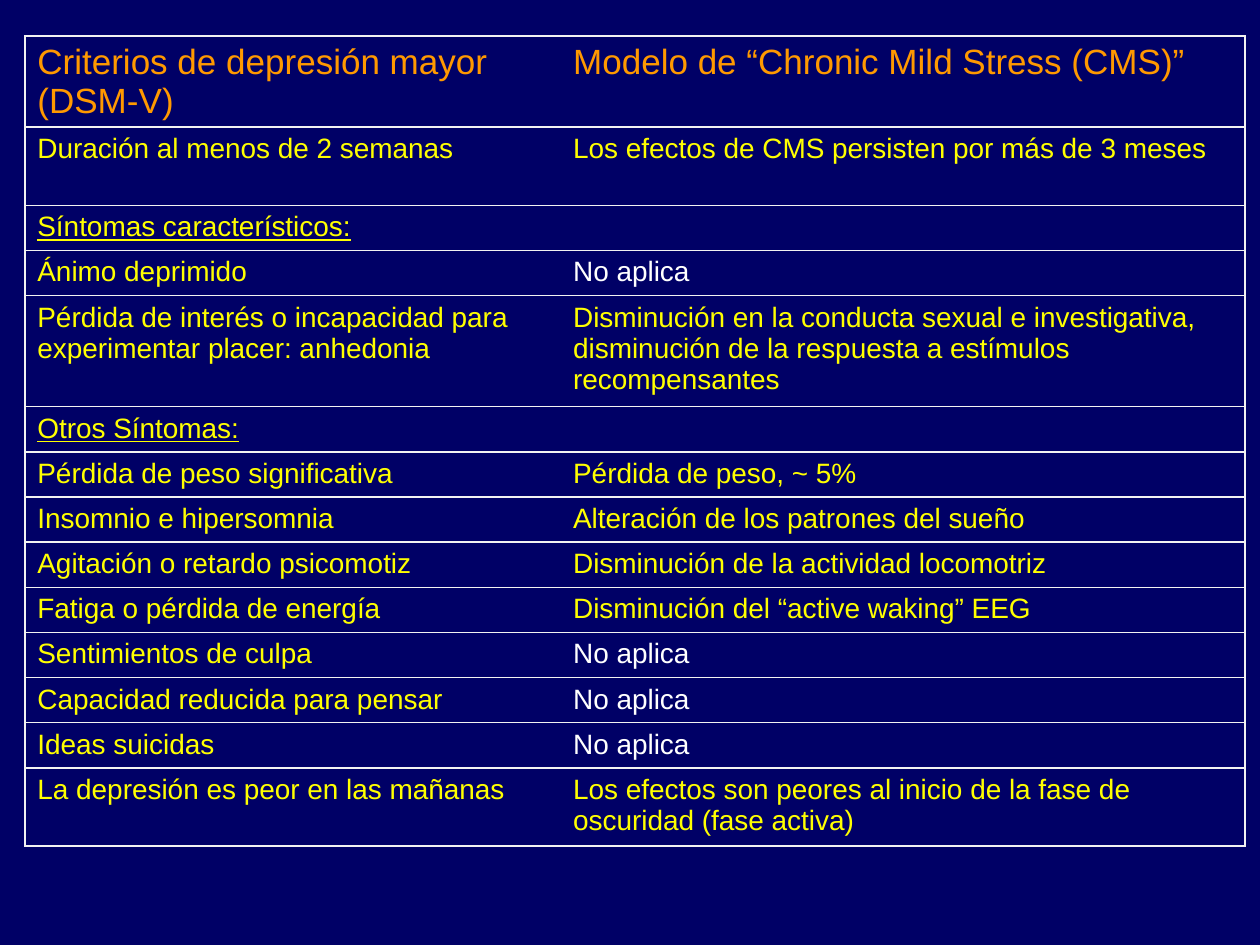
from pptx import Presentation
from pptx.dml.color import RGBColor as RGB
from pptx.oxml import parse_xml
from pptx.oxml.ns import nsdecls
from pptx.util import Cm, Pt

# Content: (criterion, equivalent in the model, row height in cm)
# A row without an equivalent is a section heading across both columns.
SINGLE, DOUBLE, TRIPLE = 0.91, 1.58, 2.24
NOT_APPLICABLE = "No aplica"
HEADER = ("Criterios de depresión mayor (DSM-V)",
          "Modelo de “Chronic Mild Stress (CMS)”", 1.81)
CRITERIA = [
    ("Duración al menos de 2 semanas",
     "Los efectos de CMS persisten por más de 3 meses", DOUBLE),
    ("Síntomas característicos:", None, SINGLE),
    ("Ánimo deprimido", NOT_APPLICABLE, SINGLE),
    ("Pérdida de interés o incapacidad para experimentar placer: anhedonia",
     "Disminución en la conducta sexual e investigativa, "
     "disminución de la respuesta a estímulos recompensantes", TRIPLE),
    ("Otros Síntomas:", None, SINGLE),
    ("Pérdida de peso significativa", "Pérdida de peso, ~ 5%", SINGLE),
    ("Insomnio e hipersomnia", "Alteración de los patrones del sueño", SINGLE),
    ("Agitación o retardo psicomotiz",
     "Disminución de la actividad locomotriz", SINGLE),
    ("Fatiga o pérdida de energía", "Disminución del “active waking” EEG", SINGLE),
    ("Sentimientos de culpa", NOT_APPLICABLE, SINGLE),
    ("Capacidad reducida para pensar", NOT_APPLICABLE, SINGLE),
    ("Ideas suicidas", NOT_APPLICABLE, SINGLE),
    ("La depresión es peor en las mañanas",
     "Los efectos son peores al inicio de la fase de oscuridad (fase activa)",
     DOUBLE),
]
THEME = {
    "font": "Arial", "header_size": 20, "body_size": 16,
    "background": "000066", "header": "FF9900", "body": "FFFF00",
    "not_applicable": "FFFFFF", "border": "F2F2F2", "border_width": 1,
}
LEFT, TOP = 0.5, 0.73
COLUMN_WIDTHS = (10.8, 13.8)


def set_borders(cell, sides):
    """Draw the given sides (L, R, T, B) and hide the others."""
    props = cell._tc.get_or_add_tcPr()
    for position, side in enumerate("LRTB"):
        paint = (f'<a:solidFill><a:srgbClr val="{THEME["border"]}"/></a:solidFill>'
                 if side in sides else "<a:noFill/>")
        props.insert(position, parse_xml(
            f'<a:ln{side} {nsdecls("a")} w="{Pt(THEME["border_width"])}">'
            f"{paint}</a:ln{side}>"))


def write(cell, text, color, size, underline):
    cell.text_frame.text = text
    font = cell.text_frame.paragraphs[0].runs[0].font
    font.name, font.size, font.bold = THEME["font"], Pt(size), False
    font.color.rgb = RGB.from_string(color)
    font.underline = underline


def main():
    deck = Presentation()
    deck.slide_width, deck.slide_height = Cm(25.4), Cm(19.05)
    slide = deck.slides.add_slide(deck.slide_layouts[6])
    slide.background.fill.solid()
    slide.background.fill.fore_color.rgb = RGB.from_string(THEME["background"])

    # Table grid
    rows = [HEADER] + CRITERIA
    comparison = slide.shapes.add_table(
        len(rows), len(COLUMN_WIDTHS), Cm(LEFT), Cm(TOP),
        Cm(sum(COLUMN_WIDTHS)), Cm(sum(row[2] for row in rows))).table
    comparison.first_row = comparison.horz_banding = False
    for column, width in zip(comparison.columns, COLUMN_WIDTHS):
        column.width = Cm(width)

    # Cells: outer frame and row rules, no line between the columns
    for r, (criterion, equivalent, height) in enumerate(rows):
        comparison.rows[r].height = Cm(height)
        is_section = equivalent is None
        role = "header" if r == 0 else "body"
        for c, text in enumerate((criterion, equivalent)):
            cell = comparison.cell(r, c)
            cell.fill.background()
            set_borders(cell, "LRTB" if is_section else ("LTB", "RTB")[c])
            if text:
                color = "not_applicable" if text == NOT_APPLICABLE else role
                write(cell, text, THEME[color], THEME[f"{role}_size"], is_section)
        if is_section:
            comparison.cell(r, 0).merge(comparison.cell(r, 1))

    deck.save("out.pptx")


if __name__ == "__main__":
    main()
